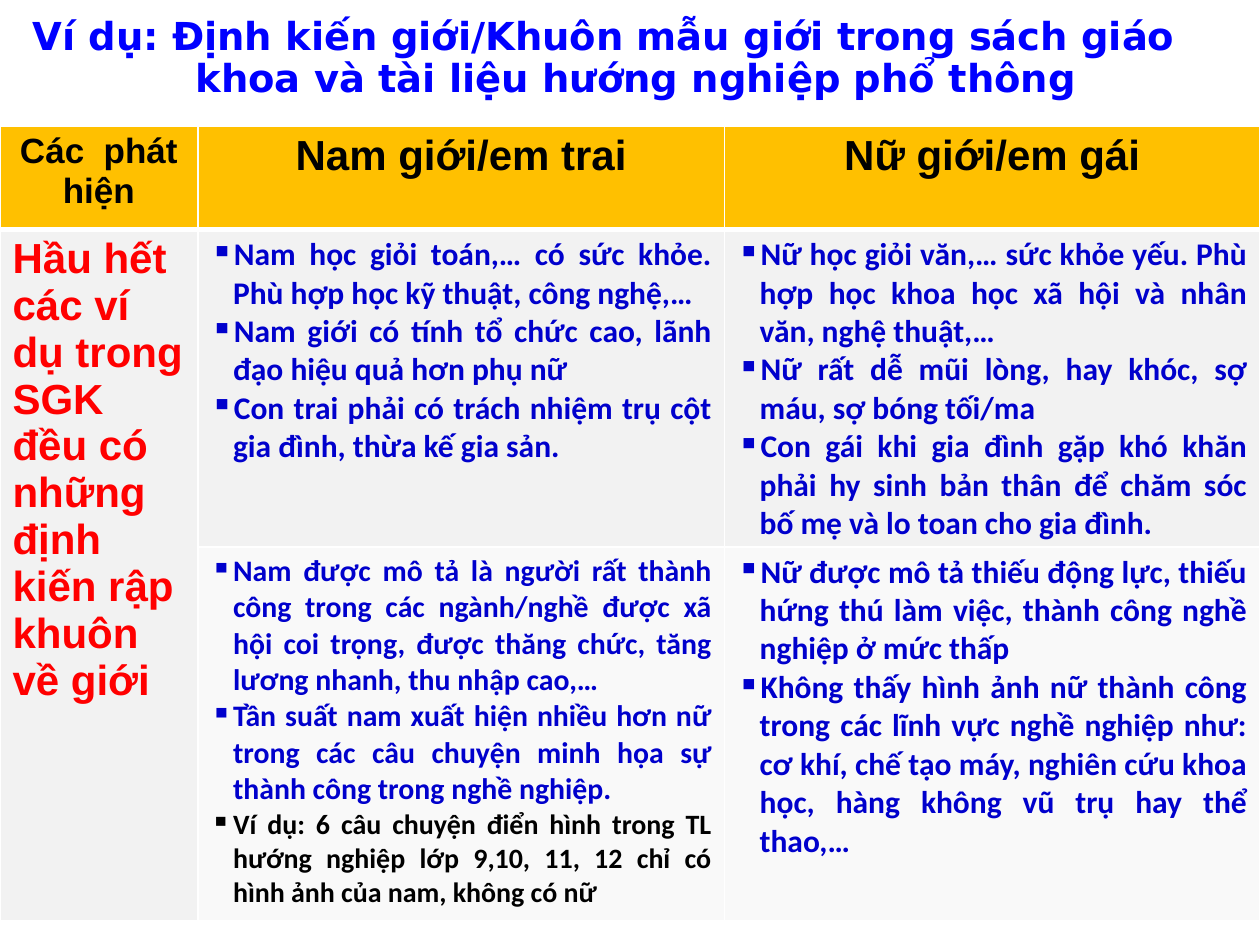
from dataclasses import dataclass

from lxml.etree import SubElement
from pptx import Presentation
from pptx.dml.color import RGBColor
from pptx.enum.text import PP_ALIGN
from pptx.oxml.ns import qn
from pptx.util import Inches, Pt


@dataclass(frozen=True)
class Theme:
    title: str = "0000FF"
    header: str = "FFC000"
    accent: str = "FF0000"
    body: str = "0000CC"
    ink: str = "000000"
    border: str = "FFFFFF"
    bands: tuple = ("F2F2F2", "F9F9F9")
    title_font: str = "DejaVu Sans"
    head_font: str = "Arial"
    body_font: str = "Calibri"
    title_size: int = 22
    head_size: int = 24
    label_size: int = 20
    body_size: int = 18
    compact_size: int = 17
    note_size: int = 16
    thin: int = 1
    thick: int = 3


THEME = Theme()
COLUMNS = (1.57, 4.18, 4.25)
ROWS = (0.82, 2.52, 2.97)
TITLE = "Ví dụ: Định kiến giới/Khuôn mẫu giới trong sách giáo khoa và tài liệu hướng nghiệp phổ thông"
HEADINGS = ("Các  phát hiện", "Nam giới/em trai", "Nữ giới/em gái")
FINDING = "Hầu hết các ví dụ trong SGK đều có những định kiến rập khuôn về giới"
MALE_TRAITS = (
    "Nam học giỏi toán,… có sức khỏe. Phù hợp học kỹ thuật, công nghệ,… ",
    "Nam giới có tính tổ chức cao, lãnh đạo hiệu quả hơn phụ nữ",
    "Con trai phải có trách nhiệm trụ cột gia đình, thừa kế gia sản. ",
)
FEMALE_TRAITS = (
    "Nữ học giỏi văn,… sức khỏe yếu. Phù hợp học khoa học xã hội và nhân văn, nghệ thuật,…",
    "Nữ rất dễ mũi lòng, hay khóc, sợ máu, sợ bóng tối/ma",
    "Con gái khi gia đình gặp khó khăn phải hy sinh bản thân để chăm sóc bố mẹ và lo toan cho gia đình.",
)
MALE_CAREERS = (
    "Nam được mô tả là người rất thành công trong các ngành/nghề được xã hội coi trọng, "
    "được thăng chức, tăng lương nhanh, thu nhập cao,…",
    "Tần suất nam xuất hiện nhiều hơn nữ trong các câu chuyện minh họa sự thành công trong nghề nghiệp. ",
)
MALE_EXAMPLE = (
    "Ví dụ: 6 câu chuyện điển hình trong TL hướng nghiệp lớp 9,10, 11, 12 "
    "chỉ có hình ảnh của nam, không có nữ"
)
FEMALE_CAREERS = (
    "Nữ được mô tả thiếu động lực, thiếu hứng thú làm việc, thành công nghề nghiệp ở mức thấp",
    "Không thấy hình ảnh nữ thành công trong các lĩnh vực nghề nghiệp như: cơ khí, chế tạo máy, "
    "nghiên cứu khoa học, hàng không vũ trụ hay thể thao,…",
)


def write(para, text, font, size, color, align=PP_ALIGN.LEFT):
    para.text = text
    para.alignment = align
    para.font.name = font
    para.font.size = Pt(size)
    para.font.bold = True
    para.font.color.rgb = RGBColor.from_string(color)


def hang(para, indent):
    properties = para._p.get_or_add_pPr()
    properties.set("marL", str(Inches(indent)))
    properties.set("indent", str(-Inches(indent)))
    return properties


def add_title(page, width):
    box = page.shapes.add_textbox(0, Inches(0.09), Inches(width), Inches(0.77))
    box.text_frame.word_wrap = True
    para = box.text_frame.paragraphs[0]
    hang(para, 0.51)
    para.line_spacing = 0.9
    write(para, TITLE, THEME.title_font, THEME.title_size, THEME.title, PP_ALIGN.CENTER)


def style_cell(cell, row):
    heavy_side = {0: "B", 1: "T"}.get(row)
    properties = cell._tc.get_or_add_tcPr()
    for side in "LRTB":
        weight = THEME.thick if side == heavy_side else THEME.thin
        line = SubElement(properties, qn(f"a:ln{side}"), w=str(Pt(weight)))
        SubElement(SubElement(line, qn("a:solidFill")), qn("a:srgbClr"), val=THEME.border)
    cell.fill.solid()
    cell.fill.fore_color.rgb = RGBColor.from_string((THEME.header, *THEME.bands)[row])


def add_bullets(cell, texts, size=THEME.body_size, color=THEME.body):
    frame = cell.text_frame
    for text in texts:
        para = frame.add_paragraph() if frame.text else frame.paragraphs[0]
        SubElement(hang(para, 0.18), qn("a:buChar"), char="▪")
        write(para, text, THEME.body_font, size, color, PP_ALIGN.JUSTIFY)


def add_table(page):
    frame = page.shapes.add_table(
        len(ROWS), len(COLUMNS), 0, Inches(1), Inches(sum(COLUMNS)), Inches(sum(ROWS))
    )
    table = frame.table
    for column, width in zip(table.columns, COLUMNS):
        column.width = Inches(width)
    for row, height in zip(table.rows, ROWS):
        row.height = Inches(height)
    for row in range(len(ROWS)):
        for column in range(len(COLUMNS)):
            style_cell(table.cell(row, column), row)
    table.cell(1, 0).merge(table.cell(2, 0))
    return table


def fill_table(table):
    for column, heading in enumerate(HEADINGS):
        size = THEME.head_size if column else THEME.label_size
        para = table.cell(0, column).text_frame.paragraphs[0]
        write(para, heading, THEME.head_font, size, THEME.ink, PP_ALIGN.CENTER)
    para = table.cell(1, 0).text_frame.paragraphs[0]
    write(para, FINDING, THEME.head_font, THEME.head_size, THEME.accent)
    add_bullets(table.cell(1, 1), MALE_TRAITS)
    add_bullets(table.cell(1, 2), FEMALE_TRAITS)
    add_bullets(table.cell(2, 1), MALE_CAREERS, THEME.compact_size)
    add_bullets(table.cell(2, 1), [MALE_EXAMPLE], THEME.note_size, THEME.ink)
    add_bullets(table.cell(2, 2), FEMALE_CAREERS)


def main():
    deck = Presentation()
    deck.slide_width, deck.slide_height = Inches(10), Inches(7.5)
    page = deck.slides.add_slide(deck.slide_layouts[6])
    add_title(page, 9.58)
    fill_table(add_table(page))
    deck.save("out.pptx")


if __name__ == "__main__":
    main()
